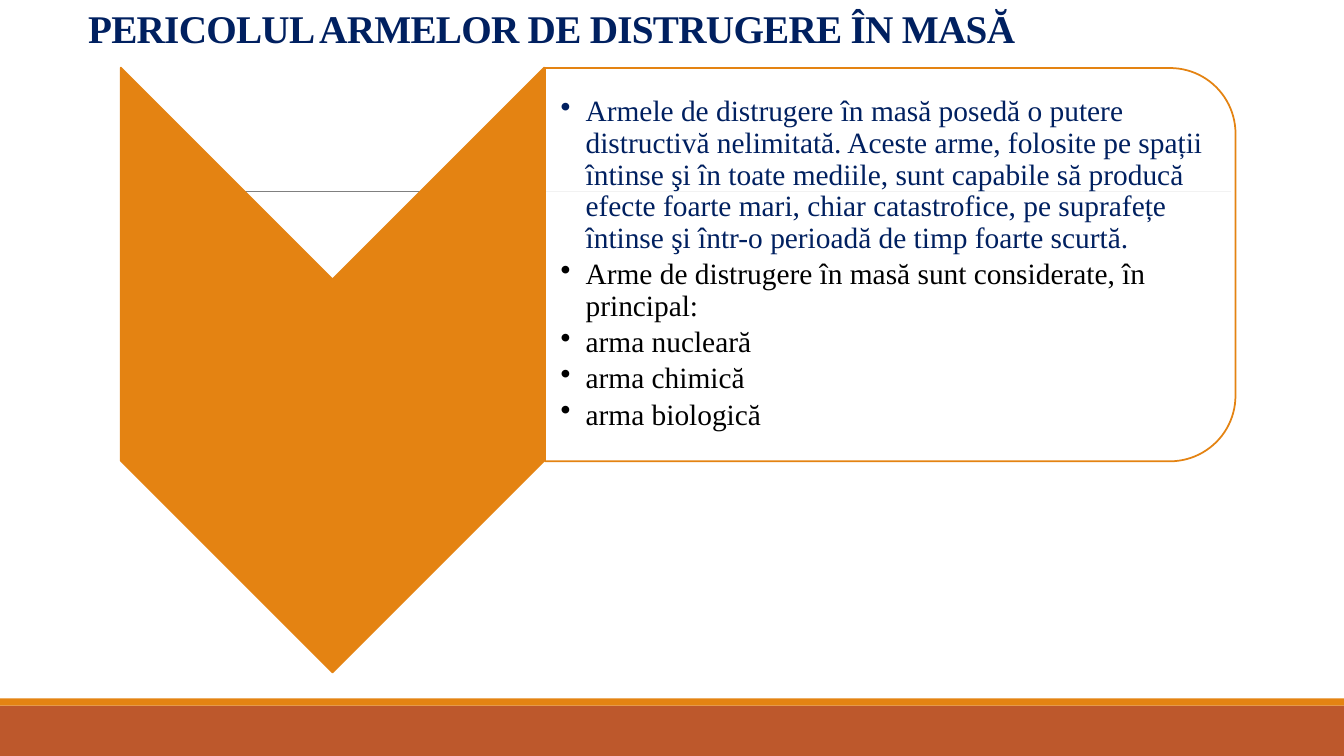
from dataclasses import dataclass
from typing import Optional

from lxml import etree
from pptx import Presentation
from pptx import util as u
from pptx.dml import color
from pptx.enum import shapes, text
from pptx.oxml import ns

FONT = "Times New Roman"
NAVY, BLACK, WHITE = "002060", "000000", "FFFFFF"
ORANGE, RUST, GREY = "E48312", "BD582C", "808080"
SLIDE_WIDTH, SLIDE_HEIGHT = 33.87, 19.05


@dataclass
class Block:
    """A preset shape; lengths in centimetres, before rotation."""
    preset: shapes.MSO_SHAPE
    left: float
    top: float
    width: float
    height: float
    fill: str
    line: Optional[str] = None
    rotation: float = 0
    opacity: int = 100


@dataclass
class Bullet:
    words: str
    colour: str = BLACK


BANDS = [
    Block(shapes.MSO_SHAPE.RECTANGLE, 0, 17.78, SLIDE_WIDTH, 1.27, RUST),
    Block(shapes.MSO_SHAPE.RECTANGLE, 0, 17.6, SLIDE_WIDTH, 0.18, ORANGE),
]
CHEVRON_AND_PANEL = [
    Block(shapes.MSO_SHAPE.CHEVRON, 0.76, 3.99, 15.24, 10.67, ORANGE, ORANGE, 90),
    Block(shapes.MSO_SHAPE.ROUND_2_SAME_RECTANGLE, 17.48, -2.03, 9.91, 17.4,
          WHITE, ORANGE, 90, 90),
]
BULLETS = [
    Bullet("Armele de distrugere în masă posedă o putere distructivă nelimitată. "
           "Aceste arme, folosite pe spații întinse şi în toate mediile, sunt "
           "capabile să producă efecte foarte mari, chiar catastrofice, pe "
           "suprafețe întinse şi într-o perioadă de timp foarte scurtă.", NAVY),
    Bullet("Arme de distrugere în masă sunt considerate, în principal:"),
    Bullet("arma nucleară"),
    Bullet("arma chimică"),
    Bullet("arma biologică"),
]


def rgb(colour: str) -> color.RGBColor:
    return color.RGBColor.from_string(colour)


def add_block(slide, block: Block) -> None:
    shape = slide.shapes.add_shape(
        block.preset, u.Cm(block.left), u.Cm(block.top),
        u.Cm(block.width), u.Cm(block.height))
    shape.shadow.inherit = False
    shape.rotation = block.rotation
    shape.fill.solid()
    shape.fill.fore_color.rgb = rgb(block.fill)
    if block.opacity < 100:
        fill_colour = shape._element.spPr.find(".//" + ns.qn("a:srgbClr"))
        alpha = etree.SubElement(fill_colour, ns.qn("a:alpha"))
        alpha.set("val", str(block.opacity * 1000))
    if block.line:
        shape.line.color.rgb = rgb(block.line)
        shape.line.width = u.Pt(1.25)
    else:
        shape.line.fill.background()


def add_rule(slide, left: float, right: float, top: float) -> None:
    """Draw the thin horizontal line behind the content."""
    rule = slide.shapes.add_connector(
        shapes.MSO_CONNECTOR.STRAIGHT,
        u.Cm(left), u.Cm(top), u.Cm(right), u.Cm(top))
    rule.line.color.rgb = rgb(GREY)
    rule.line.width = u.Pt(0.5)
    etree.SubElement(rule._element.spPr, ns.qn("a:effectLst"))


def add_text_frame(slide, left: float, top: float, width: float, height: float,
                   anchor: text.MSO_ANCHOR):
    frame = slide.shapes.add_textbox(
        u.Cm(left), u.Cm(top), u.Cm(width), u.Cm(height)).text_frame
    frame.word_wrap = True
    frame.vertical_anchor = anchor
    return frame


def write(paragraph, words: str, *, size: float, colour: str, bold: bool = False,
          align: text.PP_ALIGN = text.PP_ALIGN.LEFT, line_spacing: float = 1,
          space_after: float = 0, letter_spacing: float = 0,
          bulleted: bool = False) -> None:
    paragraph.alignment = align
    paragraph.line_spacing = line_spacing
    paragraph.space_after = u.Pt(space_after)
    run = paragraph.add_run()
    run.text = words
    run.font.name = FONT
    run.font.size = u.Pt(size)
    run.font.bold = bold
    run.font.color.rgb = rgb(colour)
    if letter_spacing:
        run.font._element.set("spc", str(round(letter_spacing * 100)))
    if bulleted:
        properties = paragraph._p.get_or_add_pPr()
        indent = u.Cm(0.63)
        properties.set("marL", str(indent))
        properties.set("indent", str(-indent))
        etree.SubElement(properties, ns.qn("a:buChar")).set("char", "•")


def add_title(slide) -> None:
    frame = add_text_frame(slide, 0, 0, 27.79, 1.42, text.MSO_ANCHOR.BOTTOM)
    write(frame.paragraphs[0], "PERICOLUL ARMELOR DE DISTRUGERE ÎN MASĂ",
          size=28, colour=NAVY, bold=True, align=text.PP_ALIGN.CENTER,
          line_spacing=0.85, letter_spacing=-0.5)


def add_bullets(slide) -> None:
    frame = add_text_frame(slide, 13.72, 2.18, 16.92, 8.94, text.MSO_ANCHOR.MIDDLE)
    frame.margin_left = u.Cm(0.41)
    frame.margin_top = frame.margin_right = frame.margin_bottom = u.Cm(0.03)
    for index, bullet in enumerate(BULLETS):
        paragraph = frame.add_paragraph() if index else frame.paragraphs[0]
        write(paragraph, bullet.words, size=21, colour=bullet.colour,
              line_spacing=0.9, space_after=3.15, bulleted=True)


def main() -> None:
    presentation = Presentation()
    presentation.slide_width = u.Cm(SLIDE_WIDTH)
    presentation.slide_height = u.Cm(SLIDE_HEIGHT)
    slide = presentation.slides.add_slide(presentation.slide_layouts[6])
    for band in BANDS:
        add_block(slide, band)
    add_rule(slide, 3.33, 31.01, 4.83)
    add_title(slide)
    for block in CHEVRON_AND_PANEL:
        add_block(slide, block)
    add_bullets(slide)
    presentation.save("out.pptx")


if __name__ == "__main__":
    main()
